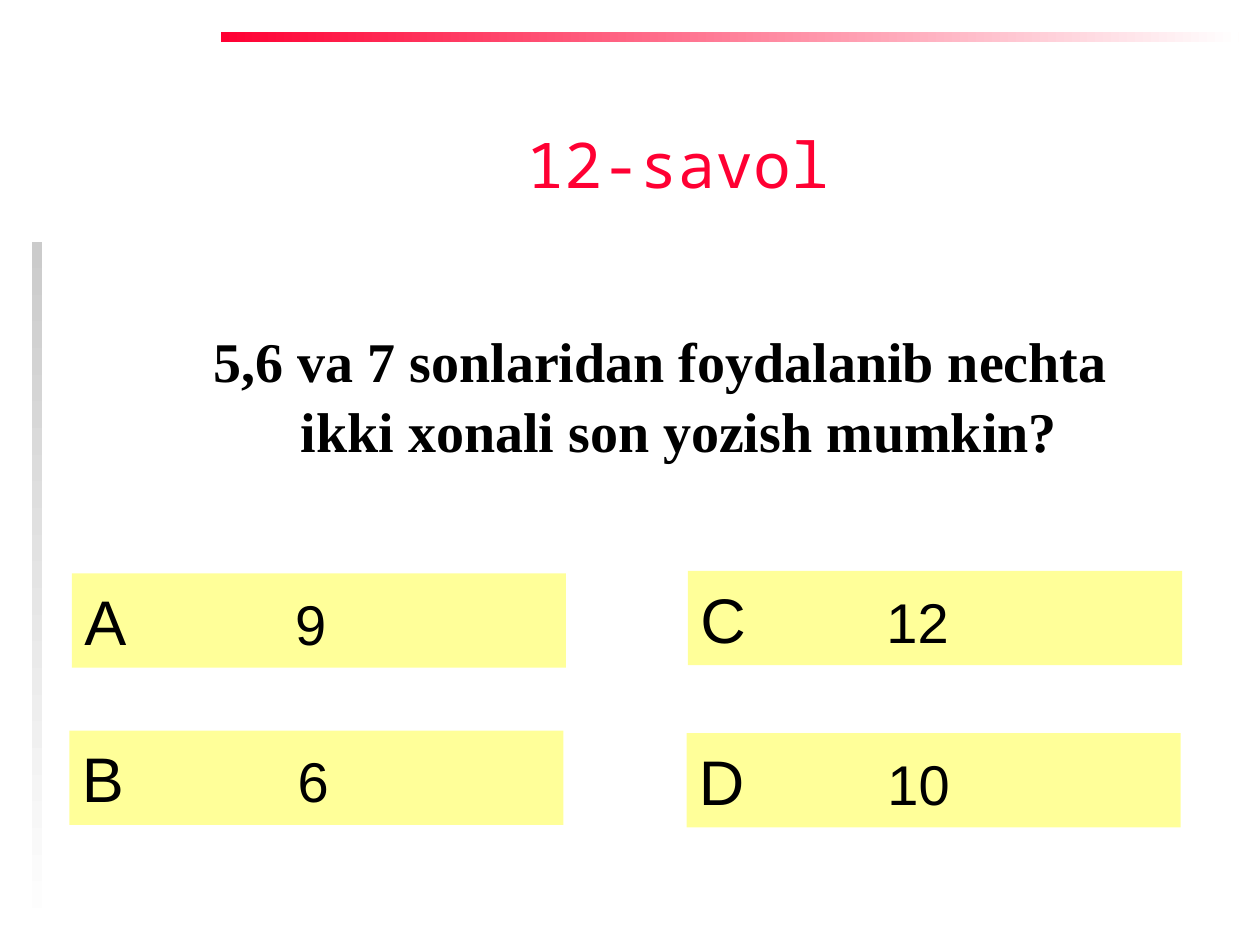
from pptx import Presentation
from pptx.dml.color import RGBColor
from pptx.enum.shapes import MSO_SHAPE as Shape
from pptx.enum.text import MSO_ANCHOR as Anchor, PP_ALIGN as Align
from pptx.oxml import parse_xml
from pptx.oxml.ns import nsdecls
from pptx.util import Cm, Pt

RED, BLACK, WHITE, GREY, YELLOW = "FF0033", "000000", "FFFFFF", "CBCBCB", "FFFF99"

# Letter, value, left, top and tab position of each answer, in cm
ANSWERS = [
    ("А", "9", 1.45, 11.56, 4.25),
    ("B", "6", 1.4, 14.73, 4.35),
    ("C", "12", 13.87, 11.51, 3.75),
    ("D", "10", 13.84, 14.78, 3.8),
]


def color(hex_string):
    return RGBColor.from_string(hex_string)


def set_font(font, name, size, hex_string, bold=False):
    font.name, font.size, font.bold = name, Pt(size), bold
    font.color.rgb = color(hex_string)


def add_rectangle(slide, left, top, width, height):
    shape = slide.shapes.add_shape(
        Shape.RECTANGLE, Cm(left), Cm(top), Cm(width), Cm(height))
    shape.shadow.inherit = False
    shape.line.fill.background()
    return shape


def add_fading_bar(slide, left, top, width, height, start, angle):
    fill = add_rectangle(slide, left, top, width, height).fill
    fill.gradient()
    fill.gradient_angle = angle
    for stop, hex_string in zip(fill.gradient_stops, (start, WHITE)):
        stop.color.rgb = color(hex_string)


def format_title(slide, text):
    title = slide.shapes.title
    title.left, title.top, title.width, title.height = Cm(10.03), Cm(2.41), Cm(7.26), Cm(2.24)
    frame = title.text_frame
    frame.text = text
    frame.word_wrap = False
    frame.vertical_anchor = Anchor.TOP
    paragraph = frame.paragraphs[0]
    paragraph.alignment = Align.CENTER
    set_font(paragraph.font, "Noto Sans Mono", 36, RED)


def add_question(slide, text):
    box = slide.shapes.add_textbox(Cm(3.02), Cm(6.4), Cm(20.4), Cm(3.99))
    frame = box.text_frame
    frame.word_wrap = True
    paragraph = frame.paragraphs[0]
    paragraph.text = text
    paragraph.alignment = Align.CENTER
    paragraph.line_spacing = 1.04
    # Hanging indent
    properties = paragraph._p.get_or_add_pPr()
    properties.set("marL", str(Cm(0.95)))
    properties.set("indent", str(Cm(-0.75)))
    set_font(paragraph.font, "Times New Roman", 32, BLACK, bold=True)


def add_answer(slide, letter, value, left, top, tab):
    shape = add_rectangle(slide, left, top, 9.96, 1.9)
    shape.fill.solid()
    shape.fill.fore_color.rgb = color(YELLOW)
    frame = shape.text_frame
    frame.vertical_anchor = Anchor.MIDDLE
    paragraph = frame.paragraphs[0]
    paragraph.alignment = Align.LEFT
    # The value stands at a tab stop
    paragraph._p.get_or_add_pPr().append(parse_xml(
        f'<a:tabLst {nsdecls("a")}><a:tab pos="{Cm(tab)}" algn="l"/></a:tabLst>'))
    for text, size in ((letter + "\t", 36), (value, 32)):
        run = paragraph.add_run()
        run.text = text
        set_font(run.font, "Arial", size, BLACK)


def main():
    presentation = Presentation()
    presentation.slide_width, presentation.slide_height = Cm(25.4), Cm(19.05)
    slide = presentation.slides.add_slide(presentation.slide_layouts[5])

    # Decorative bars
    add_fading_bar(slide, 4.45, 0.64, 20.52, 0.21, RED, 0)
    add_fading_bar(slide, 0.64, 4.87, 0.21, 13.97, GREY, 270)

    # Question and answers
    format_title(slide, "12-savol")
    add_question(slide, "5,6 va 7 sonlaridan foydalanib nechta ikki xonali son yozish mumkin?")
    for answer in ANSWERS:
        add_answer(slide, *answer)

    presentation.save("out.pptx")


if __name__ == "__main__":
    main()
